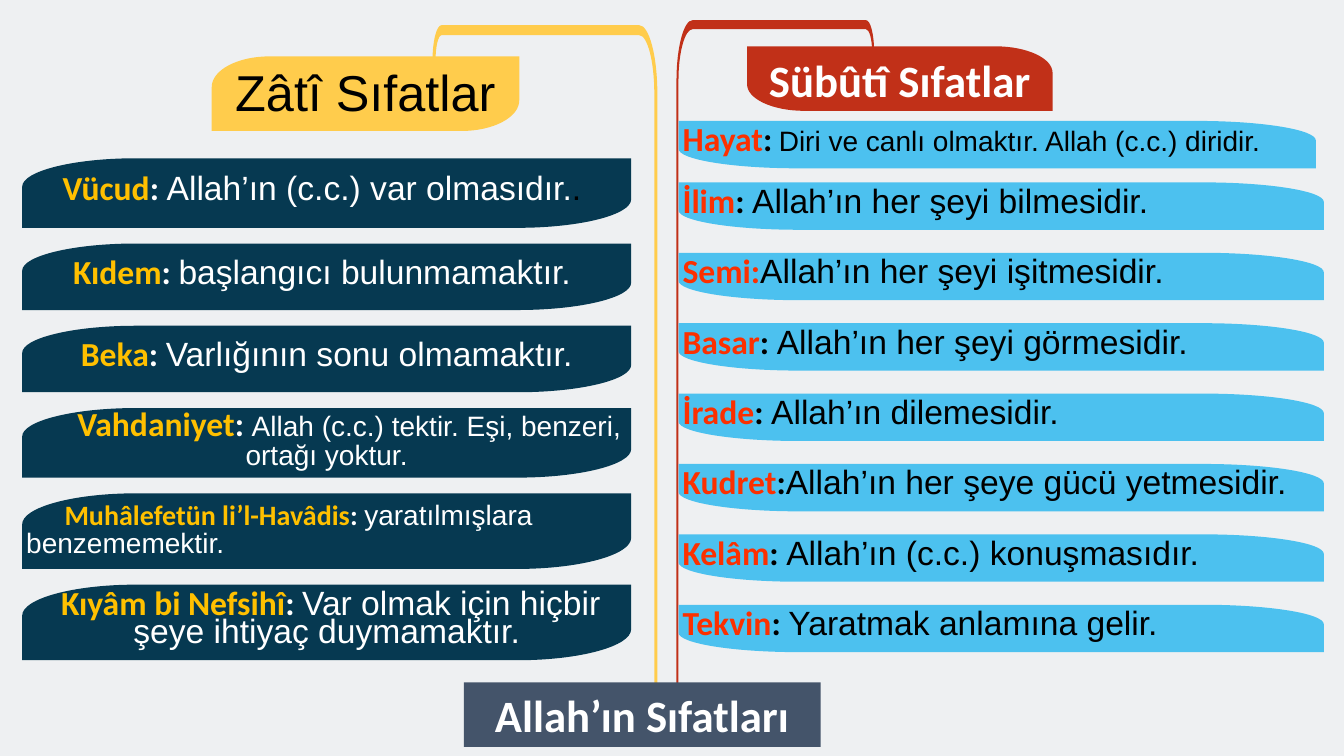
from lxml import etree
from pptx import Presentation
from pptx.dml.color import RGBColor
from pptx.enum.shapes import MSO_SHAPE
from pptx.enum.text import MSO_ANCHOR, MSO_AUTO_SIZE, PP_ALIGN
from pptx.oxml.ns import qn
from pptx.util import Inches, Pt

LEFT, CENTER = PP_ALIGN.LEFT, PP_ALIGN.CENTER
MIDDLE, BOTTOM = MSO_ANCHOR.MIDDLE, MSO_ANCHOR.BOTTOM
NO_FIT = MSO_AUTO_SIZE.NONE
RECT = MSO_SHAPE.RECTANGLE

PAPER = RGBColor(0xEE, 0xF0, 0xF2)
YELLOW = RGBColor(0xFF, 0xCC, 0x4C)
RED = RGBColor(0xC1, 0x30, 0x18)
NAVY = RGBColor(0x06, 0x39, 0x51)
BLUE = RGBColor(0x4C, 0xC1, 0xEF)
SLATE = RGBColor(0x44, 0x54, 0x6A)
GOLD = RGBColor(0xFF, 0xC0, 0x00)
ORANGE = RGBColor(0xFC, 0x30, 0x00)
WHITE = RGBColor(0xFF, 0xFF, 0xFF)
BLACK = RGBColor(0x00, 0x00, 0x00)

# How an outline step is reached: straight, or leaving flat or upright
LINE, FLAT, STEEP = "line", "flat", "steep"

# Height, name, name size, text, text size, alignment, first line indent
ZATI = [
    (0.69, "Vücud", 24, "Allah’ın (c.c.) var olmasıdır.", 24, CENTER, 0),
    (0.66, "Kıdem", 24, "başlangıcı bulunmamaktır. ", 24, CENTER, 0),
    (0.66, "Beka", 24, "Varlığının sonu olmamaktır.", 24, CENTER, 0),
    (0.69, "Vahdaniyet", 24,
     "Allah (c.c.) tektir. Eşi, benzeri, ortağı yoktur.", 20, CENTER, 0.45),
    (0.75, "Muhâlefetün li’l-Havâdis", 20,
     "yaratılmışlara benzememektir.", 20, LEFT, 0.38),
    (0.75, "Kıyâm bi Nefsihî", 24,
     "Var olmak için hiçbir şeye ihtiyaç duymamaktır.", 24, CENTER, 0.08),
]

# Name, separator, text
SUBUTI = [
    ("İlim", ": ", "Allah’ın her şeyi bilmesidir."),
    ("Semi:", "", "Allah’ın her şeyi işitmesidir."),
    ("Basar", ": ", "Allah’ın her şeyi görmesidir."),
    ("İrade", ": ", "Allah’ın dilemesidir."),
    ("Kudret", ":", "Allah’ın her şeye gücü yetmesidir."),
    ("Kelâm", ": ", "Allah’ın (c.c.) konuşmasıdır."),
    ("Tekvin", ": ", "Yaratmak anlamına gelir."),
]


def paint(shape, color):
    shape.shadow.inherit = False
    shape.fill.solid()
    shape.fill.fore_color.rgb = color
    shape.line.fill.background()


def bend(step, start, flat):
    """Turn a straight step into a quarter ellipse."""
    end = step[0]
    x, y, u, v = (int(p.get(k)) for p in (start, end) for k in ("x", "y"))
    near, far = 0.55, 0.45
    if flat:
        knobs = (x + (u - x) * near, y), (u, y + (v - y) * far)
    else:
        knobs = (x, y + (v - y) * near), (x + (u - x) * far, v)
    step.tag = qn("a:cubicBezTo")
    for i, (a, b) in enumerate(knobs):
        knob = etree.Element(qn("a:pt"), x=str(round(a)), y=str(round(b)))
        step.insert(i, knob)


def draw(slide, box, steps, color, mirror):
    """Filled outline from steps relative to the box."""
    x, y, w = box[:3]
    spots = [(Inches(x + (w - a if mirror else a)), Inches(y + b))
             for a, b, how in steps]
    pen = slide.shapes.build_freeform(*spots[0])
    pen.add_line_segments(spots[1:], close=True)
    shape = pen.convert_to_shape()
    nodes = list(shape._element.iter(qn("a:moveTo"), qn("a:lnTo")))
    for last, node, (a, b, how) in zip(nodes, nodes[1:], steps[1:]):
        if how != LINE:
            bend(node, last[-1], how == FLAT)
    paint(shape, color)
    return shape


def leaf(slide, box, color, mirror=False):
    """Bar with two opposite corners rounded."""
    w, h = box[2:]
    rx, ry = 0.187 * w, 0.41 * h
    steps = [(0, h, LINE), (0, ry, LINE), (rx, 0, STEEP), (w, 0, LINE),
             (w, h - ry, LINE), (w - rx, h, STEEP)]
    return draw(slide, box, steps, color, mirror)


def bracket(slide, box, color, tip, turn, tail, band, line, mirror=False):
    """Thin frame from a heading, over the top and down to the title."""
    w, h = box[2:]
    (tx, ty), (bx, by) = tip, turn
    steps = [(0, ty + tail, LINE), (0, ty, LINE), (tx, 0, STEEP),
             (w - bx, 0, LINE), (w, by, FLAT), (w, h, LINE),
             (w - line, h, LINE), (w - line, by, LINE),
             (w - bx, band, STEEP), (tx, band, LINE), (line, ty, FLAT),
             (line, ty + tail, LINE)]
    draw(slide, box, steps, color, mirror)


def label(shape, align, anchor=MIDDLE, top=0.04):
    frame = shape.text_frame
    frame.word_wrap = True
    frame.vertical_anchor = anchor
    frame.margin_left = frame.margin_right = frame.margin_bottom = Inches(0.04)
    frame.margin_top = Inches(top)
    para = frame.paragraphs[0]
    para.alignment = align
    para.line_spacing = Pt(20)
    return para


def style(font, name, size, color, bold):
    font.name, font.size, font.bold = name, Pt(size), bold
    font.color.rgb = color


def entry(para, parts):
    """Runs of words, typeface, size, colour and weight."""
    for words, *look in parts:
        if words:
            run = para.add_run()
            run.text = words
            style(run.font, *look)


def zati(slide, box):
    x, y, w, h = box
    # Frame and heading
    bracket(slide, (x + 4.07, y, 2.23, 6.83), YELLOW, (0.09, 0.35),
            (0.18, 0.68), 0.04, 0.1, 0.03)
    head = leaf(slide, (x + 1.88, y + 0.31, 3.05, 0.74), YELLOW)
    para = label(head, CENTER, top=0.32)
    para.text = "Zâtî Sıfatlar"
    style(para.font, "Arial", 36, BLACK, False)

    # Bars of unequal height with equal gaps
    top = y + 1.32
    gap = (y + h - top - sum(row[0] for row in ZATI)) / (len(ZATI) - 1)
    for tall, name, big, text, small, align, indent in ZATI:
        para = label(leaf(slide, (x, top, w, tall), NAVY), align)
        if indent:
            para._p.get_or_add_pPr().set("indent", str(Inches(indent)))
        entry(para, [(name, "Calibri", big, GOLD, True),
                     (": ", "Calibri", big, WHITE, True),
                     (text, "Arial", small, WHITE, False)])
        if name == "Vücud":
            entry(para, [(". ", "Arial", big, BLACK, False)])
        top += tall + gap


def subuti(slide, box):
    x, y, w, h = box
    # Frame and heading
    bracket(slide, (x - 0.02, y, 1.96, 6.88), RED, (0.08, 0.31),
            (0.16, 0.6), 0, 0.09, 0.02, mirror=True)
    head = leaf(slide, (x + 0.68, y + 0.26, 3.03, 0.64), RED, mirror=True)
    para = label(head, CENTER, BOTTOM)
    para.text = "Sübûtî Sıfatlar"
    style(para.font, "Calibri", 32, WHITE, True)

    # First bar, a little shorter than the others
    tall = 0.47
    para = label(leaf(slide, (x, y + 1, w - 0.08, tall), BLUE, True), LEFT)
    entry(para, [("Hayat", "Calibri", 24, ORANGE, True),
                 (":", "Calibri", 24, BLACK, True),
                 (" ", "Calibri", 20, BLACK, True),
                 ("Diri ve canlı olmaktır. Allah (c.c.) diridir.",
                  "Arial", 20, BLACK, False)])

    # Evenly spaced bars
    top = y + 1.61
    pitch = (y + h - tall - top) / (len(SUBUTI) - 1)
    for i, (name, sep, text) in enumerate(SUBUTI):
        bar = leaf(slide, (x, top + i * pitch, w, tall), BLUE, True)
        entry(label(bar, LEFT), [(name, "Calibri", 24, ORANGE, True),
                                 (sep, "Calibri", 24, BLACK, True),
                                 (text, "Arial", 24, BLACK, False)])


def banner(slide, box):
    title = slide.shapes.title
    title.left, title.top, title.width, title.height = map(Inches, box)
    title.fill.solid()
    title.fill.fore_color.rgb = SLATE
    frame = title.text_frame
    frame.auto_size = NO_FIT
    frame.vertical_anchor = MIDDLE
    para = frame.paragraphs[0]
    para.text = "Allah’ın Sıfatları"
    para.alignment = CENTER
    style(para.font, "Calibri", 32, WHITE, True)
    # Bring the title in front of the frames
    title._element.getparent().append(title._element)


def main():
    deck = Presentation()
    deck.slide_width, deck.slide_height = Inches(13.33), Inches(7.5)
    slide = deck.slides.add_slide(deck.slide_layouts[5])
    paint(slide.shapes.add_shape(RECT, 0, 0, deck.slide_width,
                                 deck.slide_height), PAPER)
    zati(slide, (0.22, 0.25, 6.04, 6.3))
    subuti(slide, (6.73, 0.2, 6.4, 6.27))
    banner(slide, (4.6, 6.77, 3.54, 0.64))
    deck.save("out.pptx")


if __name__ == "__main__":
    main()
